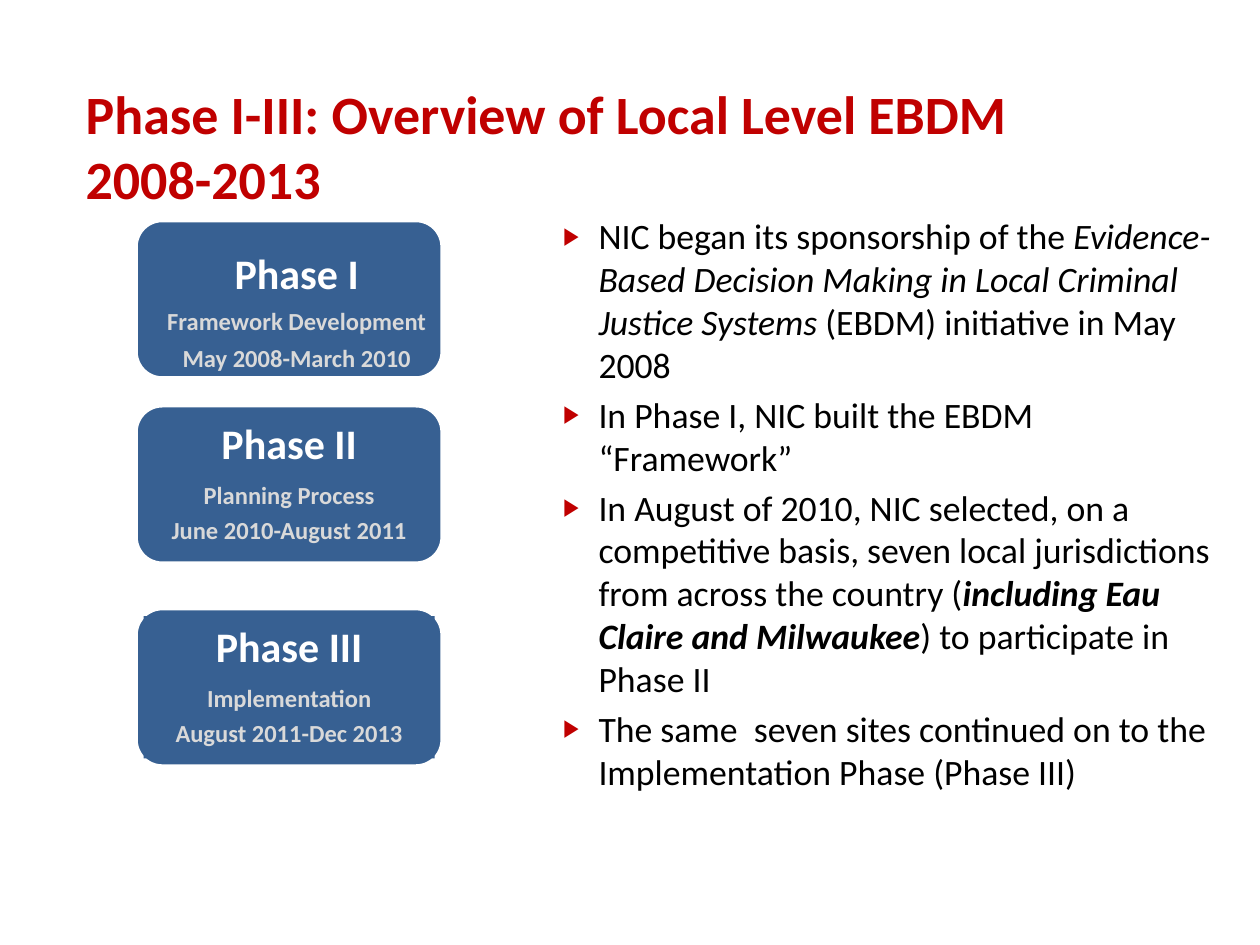
from lxml.etree import SubElement as Sub
from pptx import Presentation
from pptx.dml.color import RGBColor
from pptx.enum.shapes import MSO_SHAPE as Shape
from pptx.enum.text import MSO_ANCHOR as Anchor, MSO_AUTO_SIZE as Fit, PP_ALIGN as Align
from pptx.oxml.ns import qn
from pptx.util import Inches, Pt

RED, BLUE, WHITE, GREY, BLACK = "C00000", "376092", "FFFFFF", "D9D9D9", "000000"
TITLE = "Phase I-III: Overview of Local Level EBDM \v2008-2013"
POINTS = [
    [("NIC began its sponsorship of the ", ""),
     ("Evidence-Based Decision Making in Local Criminal Justice Systems", "i"),
     (" (EBDM) initiative in May 2008", "")],
    [("In Phase I, NIC built the EBDM “Framework”", "")],
    [("In August of 2010, NIC selected, on a competitive basis, seven local "
      "jurisdictions from across the country (", ""),
     ("including Eau Claire and Milwaukee", "bi"),
     (") to participate in Phase II", "")],
    [("The same  seven sites continued on to the Implementation Phase (Phase III)", "")],
]
# top of card, text offset (x, y), space after each line, filled label, lines
PHASES = [
    (1.75, (0.12, 0.17), (6, 6, 0), False,
     ("Phase I", "Framework Development", "May 2008-March 2010")),
    (3.22, (0.06, 0.06), (8.4, 4.9, 0), False,
     ("Phase II", "Planning Process", "June 2010-August 2011")),
    (4.83, (0.06, 0.06), (8.4, 4.9, 0), True,
     ("Phase III", "Implementation", "August 2011-Dec 2013")),
]


def color(code):
    return RGBColor.from_string(code)


def write(para, text, size, ink, bold=False, italic=False):
    for i, part in enumerate(text.split("\v")):
        if i:
            para.add_line_break()
        run = para.add_run()
        run.text = part
        font = run.font
        font.name, font.size = "Calibri", Pt(size)
        font.bold, font.italic = bold, italic
        font.color.rgb = color(ink)


def place(shape, x, y, w, h):
    shape.left, shape.top, shape.width, shape.height = map(Inches, (x, y, w, h))


def setup(shape, anchor, side=0.1):
    frame = shape.text_frame
    frame.word_wrap, frame.auto_size = True, Fit.NONE
    frame.vertical_anchor = anchor
    frame.margin_left = frame.margin_right = Inches(side)
    frame.margin_top = frame.margin_bottom = Inches(0.05)
    return frame


def paras(frame, count):
    return [frame.paragraphs[0]] + [frame.add_paragraph() for _ in range(count - 1)]


def bullet(para):
    props = para._p.get_or_add_pPr()
    props.set("marL", str(Inches(0.4)))
    props.set("indent", str(Inches(-0.28)))
    Sub(Sub(props, qn("a:buClr")), qn("a:srgbClr"), val=RED)
    Sub(props, qn("a:buSzPct"), val="68000")
    Sub(props, qn("a:buFont"), typeface="Arial")
    Sub(props, qn("a:buChar"), char="▶")


def add_title(slide, *box):
    title = slide.shapes.title
    place(title, *box)
    para = setup(title, Anchor.TOP).paragraphs[0]
    para.alignment = Align.LEFT
    write(para, TITLE, 30.8, RED, bold=True)


def add_points(slide, *box):
    body = slide.placeholders[1]
    place(body, *box)
    frame = setup(body, Anchor.TOP)
    for i, (para, runs) in enumerate(zip(paras(frame, len(POINTS)), POINTS)):
        bullet(para)
        para.space_before = Pt(4 if i else 0)
        for text, style in runs:
            write(para, text, 20.4, BLACK, "b" in style, "i" in style)


def add_box(group, kind, x, y, w, h):
    shape = group.shapes.add_shape(kind, *map(Inches, (x, y, w, h)))
    shape.shadow.inherit = False
    shape.fill.solid()
    shape.fill.fore_color.rgb = color(BLUE)
    return shape


def add_phase(slide, x, y, w, h, shift, gaps, filled, lines):
    group = slide.shapes.add_group_shape()
    card = add_box(group, Shape.ROUNDED_RECTANGLE, x, y, w, h)
    card.line.color.rgb = color(WHITE)
    card.line.width = Pt(2)
    label = add_box(group, Shape.RECTANGLE, x + shift[0], y + shift[1], w - 0.12, h - 0.12)
    label.line.fill.background()
    if not filled:
        label.fill.background()
    frame = setup(label, Anchor.MIDDLE, 0.05)
    for i, (para, text, gap) in enumerate(zip(paras(frame, len(lines)), lines, gaps)):
        para.alignment = Align.CENTER
        para.line_spacing, para.space_after = 0.9, Pt(gap)
        write(para, text, 14 if i else 24, GREY if i else WHITE, bold=True)


def main():
    deck = Presentation()
    deck.slide_width, deck.slide_height = Inches(10), Inches(7.5)
    slide = deck.slides.add_slide(deck.slide_layouts[1])
    add_title(slide, 0.58, 0.59, 9, 0.97)
    add_points(slide, 4.25, 1.65, 5.58, 4.42)
    for top, *rest in PHASES:
        add_phase(slide, 1.08, top, 2.43, 1.25, *rest)
    deck.save("out.pptx")


if __name__ == "__main__":
    main()
